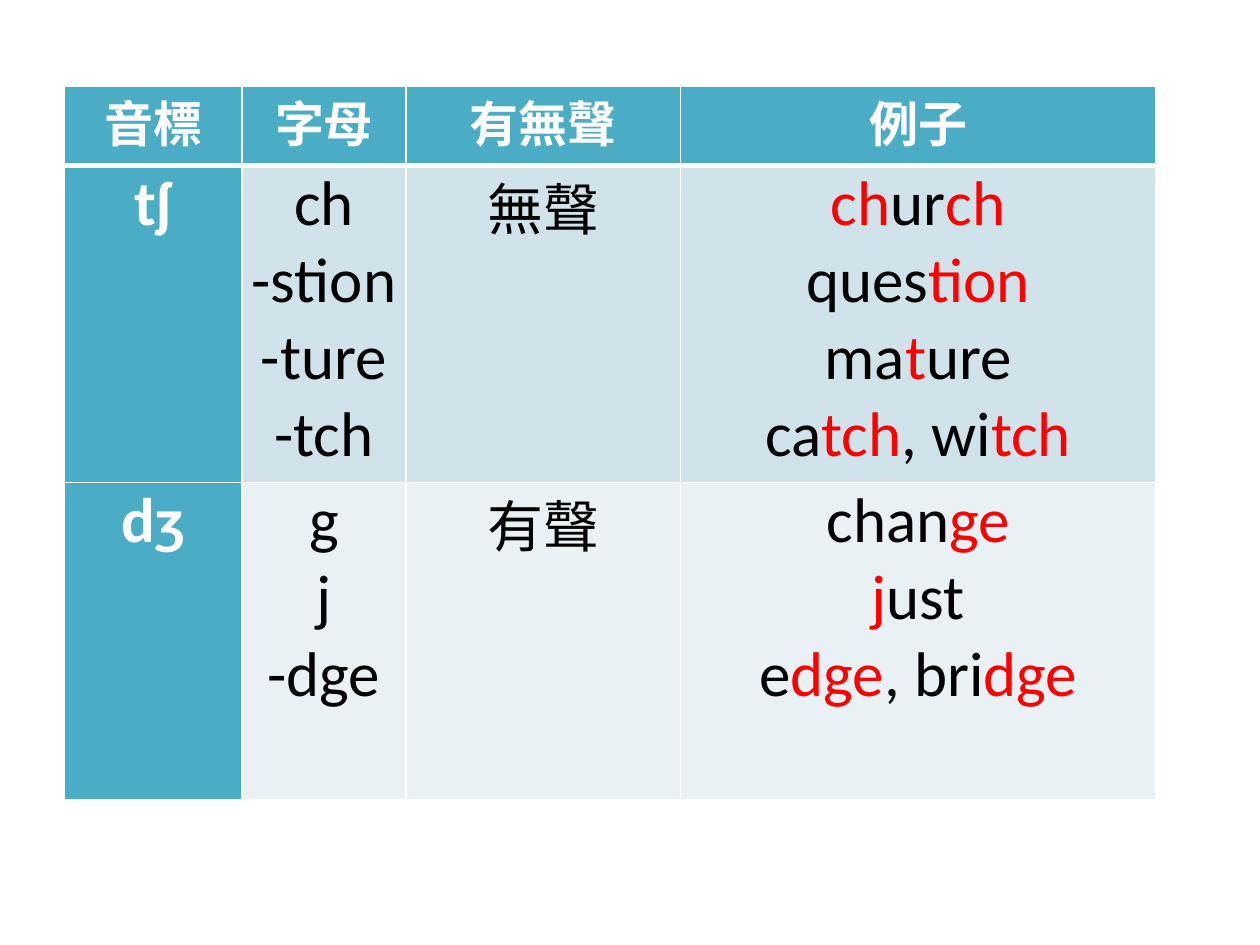
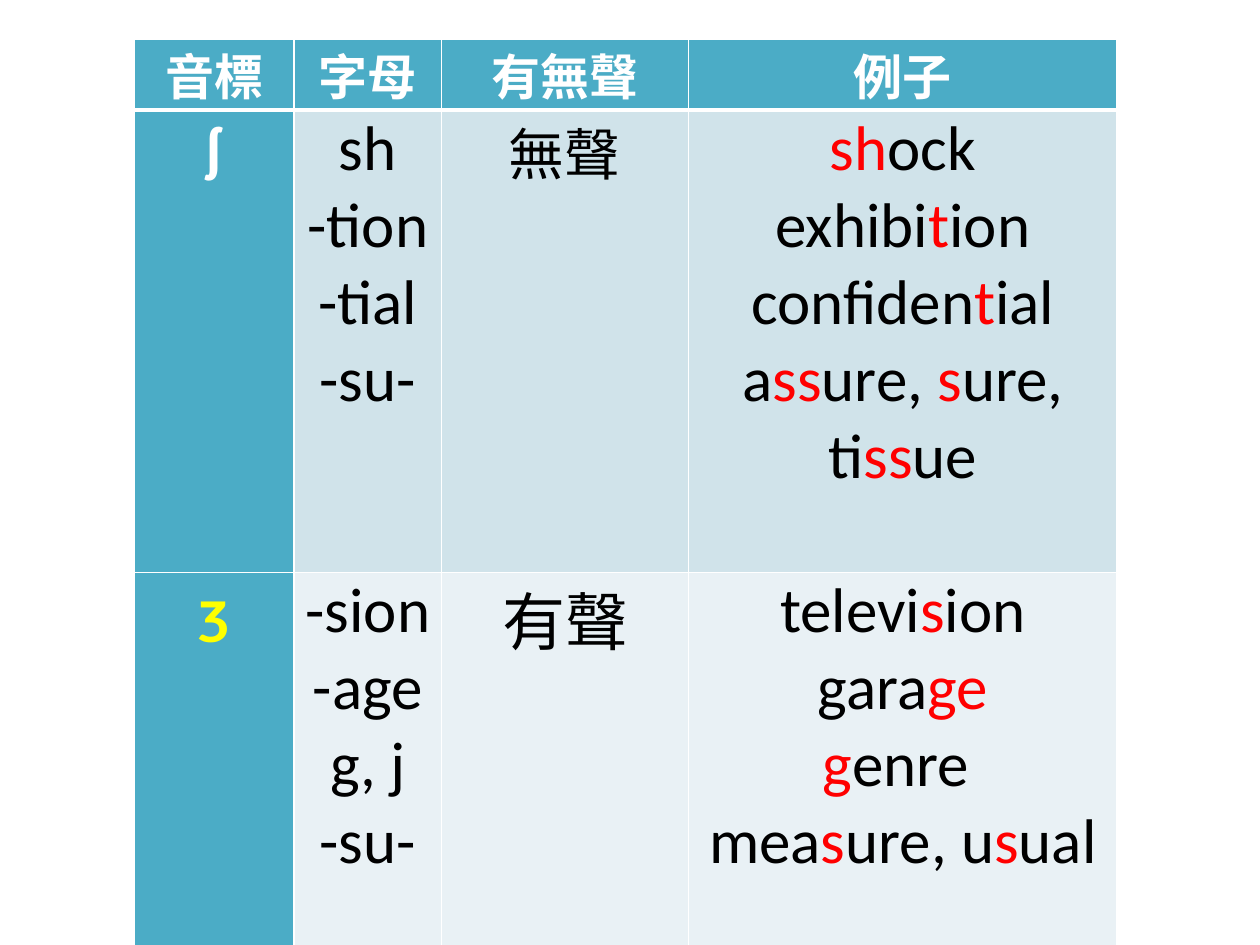
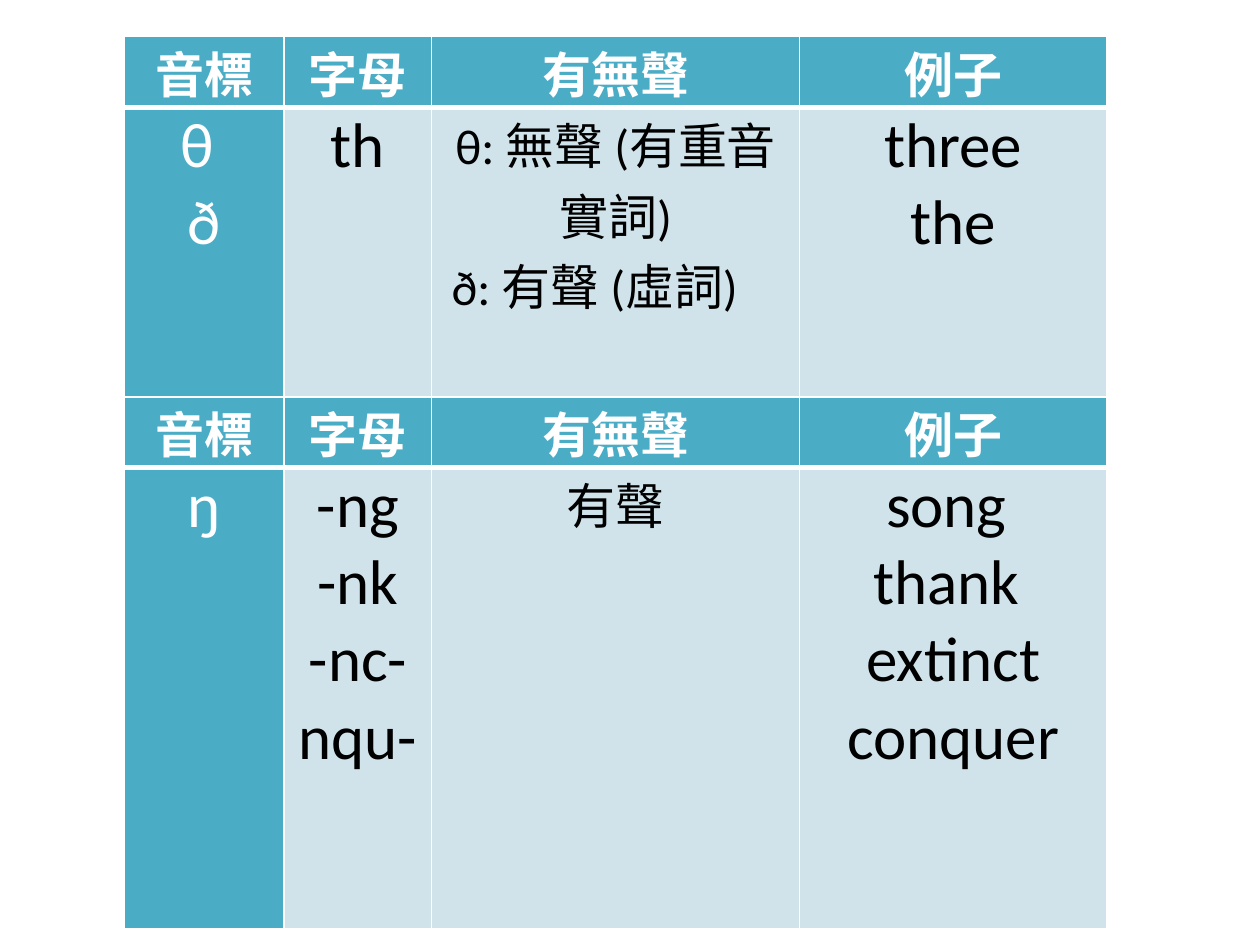
import dataclasses

import lxml.etree
import pptx
import pptx.dml.color
import pptx.enum.lang
import pptx.enum.text
import pptx.oxml.ns
import pptx.util

Cm = pptx.util.Cm
Pt = pptx.util.Pt
Align = pptx.enum.text.PP_ALIGN

TEAL, WHITE, BLACK, RED, YELLOW = "4BACC6", "FFFFFF", "000000", "FF0000", "FFFF00"
BANDS = ["D0E3EA", "E9F1F5"]
HEADINGS = ["音標", "字母", "有無聲", "例子"]
HEADER_FORMAT = {"size": Pt(28), "bold": True, "color": WHITE}
SYMBOL_FORMAT = {"size": Pt(36), "bold": True, "color": WHITE}
BODY_FORMAT = {"size": Pt(36), "bold": False, "color": BLACK}
THIN, THICK = Pt(1), Pt(3)


@dataclasses.dataclass
class Sound:
    """One table row; square brackets mark the red letters of an example."""
    symbols: list
    letters: list
    voicing: list
    examples: list
    voicing_size: int = 32
    symbol_changes: dict = dataclasses.field(default_factory=dict)


def rgb(value):
    return pptx.dml.color.RGBColor.from_string(value)


def add_span(para, text, style):
    span = para.add_run()
    span.text = text
    span.font.name = "Calibri"
    span.font.language_id = pptx.enum.lang.MSO_LANGUAGE_ID.TRADITIONAL_CHINESE
    for name, value in style.items():
        if name == "color":
            span.font.color.rgb = rgb(value)
        else:
            setattr(span.font, name, value)


def add_marked_text(para, text, style):
    """Write text, with the parts in square brackets in red."""
    for index, part in enumerate(text.replace("]", "[").split("[")):
        if part:
            add_span(para, part, {**style, "color": RED} if index % 2 else style)


def set_borders(cell, widths):
    properties = cell._tc.get_or_add_tcPr()
    for side, width in widths.items():
        line = lxml.etree.SubElement(
            properties, pptx.oxml.ns.qn("a:ln" + side), w=str(int(width)))
        fill = lxml.etree.SubElement(line, pptx.oxml.ns.qn("a:solidFill"))
        lxml.etree.SubElement(fill, pptx.oxml.ns.qn("a:srgbClr"), val=WHITE)


def fill_cell(cell, lines, style, color, borders, later_align=Align.CENTER):
    """Format a cell and write its lines; later_align is for all but the first."""
    margins = {"margin_left": Cm(0.18), "margin_right": Cm(0.18),
               "margin_top": 0, "margin_bottom": 0}
    for name, value in margins.items():
        setattr(cell, name, value)
    set_borders(cell, borders)
    cell.fill.solid()
    cell.fill.fore_color.rgb = rgb(color)
    frame = cell.text_frame
    for index, text in enumerate(lines):
        para = frame.add_paragraph() if index else frame.paragraphs[0]
        para.alignment = later_align if index else Align.CENTER
        add_marked_text(para, text, style)


def add_sound_table(page, left, top, widths, heights, sounds):
    """Add a phonetics table; all lengths are in centimetres."""
    table = page.shapes.add_table(
        len(heights), len(widths), Cm(left), Cm(top),
        Cm(sum(widths)), Cm(sum(heights))).table
    table.horz_banding = False
    for column, width in zip(table.columns, widths):
        column.width = Cm(width)
    for row, height in zip(table.rows, heights):
        row.height = Cm(height)

    sides = {"L": THIN, "R": THIN, "T": THIN, "B": THIN}
    for column, heading in enumerate(HEADINGS):
        fill_cell(table.cell(0, column), [heading], HEADER_FORMAT, TEAL,
                  {**sides, "B": THICK})

    for index, sound in enumerate(sounds):
        borders = sides if index else {**sides, "T": THICK}
        band = BANDS[index % len(BANDS)]
        symbol, letters, voicing, examples = table.rows[index + 1].cells
        fill_cell(symbol, sound.symbols, {**SYMBOL_FORMAT, **sound.symbol_changes},
                  TEAL, borders)
        fill_cell(letters, sound.letters, BODY_FORMAT, band, borders)
        fill_cell(voicing, sound.voicing,
                  {**BODY_FORMAT, "size": Pt(sound.voicing_size)},
                  band, borders, Align.LEFT)
        fill_cell(examples, sound.examples, BODY_FORMAT, band, borders)


AFFRICATES = [
    Sound(["tʃ"], ["ch", "-stion", "-ture", "-tch"], ["無聲"],
          ["[ch]ur[ch]", "ques[tion]", "ma[t]ure", "ca[tch], wi[tch]"]),
    Sound(["dʒ"], ["g", "j", "-dge"], ["有聲"],
          ["chan[ge]", "[j]ust", "e[dge], bri[dge]"]),
]
FRICATIVES = [
    Sound(["ʃ"], ["sh", "-tion", "-tial", "-su-"], ["無聲"],
          ["[sh]ock", "exhibi[t]ion", "confiden[t]ial",
           "a[ss]ure, [s]ure, ti[ss]ue"]),
    Sound(["ʒ"], ["-sion", "-age", "g, j", "-su-"], ["有聲"],
          ["televi[s]ion", "gara[ge]", "[g]enre ", "mea[s]ure, u[s]ual"],
          voicing_size=36, symbol_changes={"color": YELLOW}),
]
DENTALS = [
    Sound(["θ ", "ð"], ["th"], ["θ: 無聲 (有重音實詞)", " ð: 有聲 (虛詞)"],
          ["three", "the"], voicing_size=28, symbol_changes={"bold": False}),
]
NASALS = [
    Sound(["ŋ"], ["-ng", "-nk", "-nc-", "nqu-"], ["有聲"],
          ["song ", "thank ", "extinct", "conquer"],
          voicing_size=28, symbol_changes={"bold": False}),
]
WIDE = [3.58, 3.3, 5.54, 9.58]
NARROW = [3.23, 2.97, 4.98, 8.64]
VOICING_WIDE = [3.23, 2.97, 7.42, 6.2]

# Each page lists its tables: left, top, column widths, row heights, sounds.
PAGES = [
    [(1.3, 1.73, WIDE, [1.6, 6.4, 6.4], AFFRICATES)],
    [(2.7, 0.79, NARROW, [1.42, 9.32, 7.52], FRICATIVES)],
    [(2.5, 0.74, VOICING_WIDE, [1.42, 5.84], DENTALS),
     (2.5, 8, VOICING_WIDE, [1.42, 9.3], NASALS)],
]


def main():
    deck = pptx.Presentation()
    deck.slide_width, deck.slide_height = Cm(25.4), Cm(19.05)
    blank = deck.slide_layouts.get_by_name("Blank")
    for tables in PAGES:
        page = deck.slides.add_slide(blank)
        for table in tables:
            add_sound_table(page, *table)
    deck.save("out.pptx")


if __name__ == "__main__":
    main()
